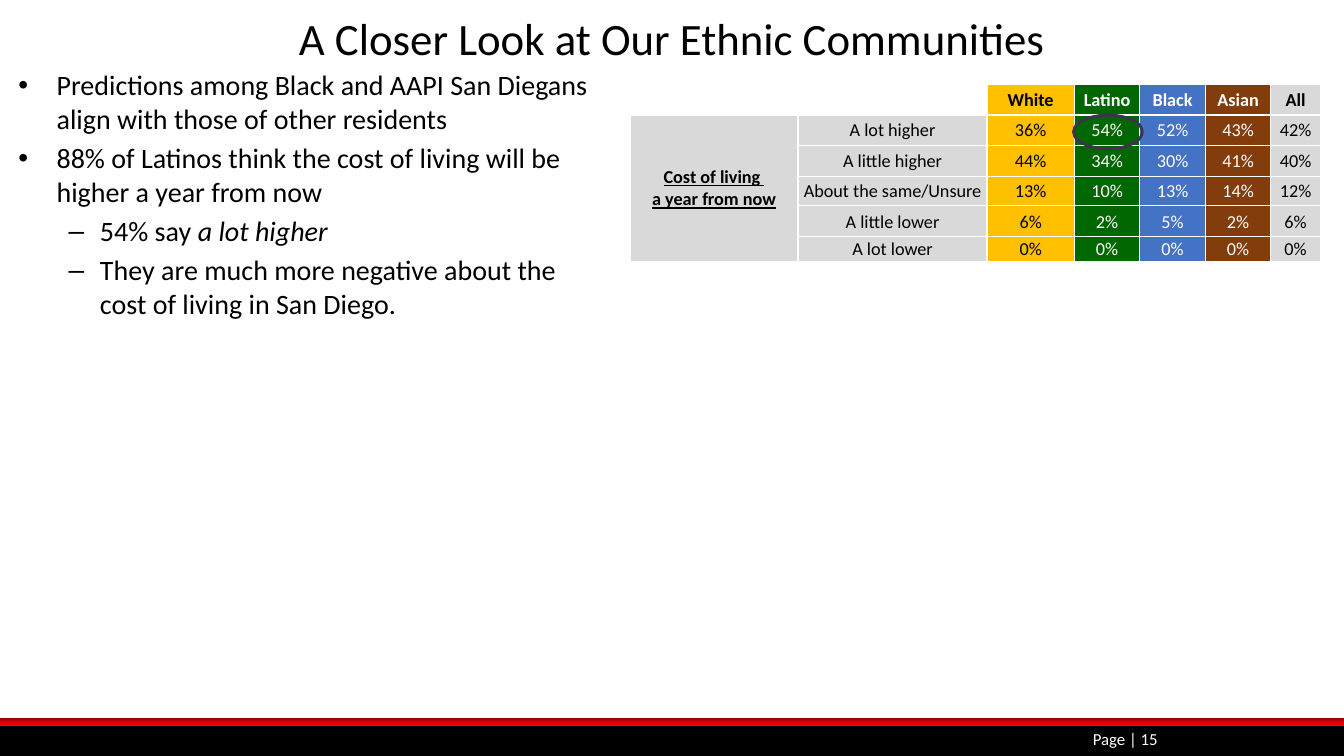
import copy

import lxml.etree
import pptx
import pptx.dml.color
import pptx.enum.shapes
import pptx.enum.text
import pptx.oxml.ns
import pptx.util

SHAPE = pptx.enum.shapes.MSO_SHAPE
ALIGN = pptx.enum.text.PP_ALIGN
ANCHOR = pptx.enum.text.MSO_ANCHOR
BLACK, WHITE, GREY = "000000", "FFFFFF", "D9D9D9"


def color(value):
    return pptx.dml.color.RGBColor.from_string(value)


def add_xml(parent, tag, **attributes):
    return lxml.etree.SubElement(parent, pptx.oxml.ns.qn(tag), attributes)


class SlideBuilder:
    """Draws on one slide; lengths are cells of a grid of 160 columns by 90 rows."""

    font_name = "Calibri"

    def __init__(self, presentation):
        self.slide = presentation.slides.add_slide(presentation.slide_layouts[6])
        self.column = presentation.slide_width / 160
        self.row = presentation.slide_height / 90

    def place(self, left, top, width, height):
        return (round(left * self.column), round(top * self.row),
                round(width * self.column), round(height * self.row))

    def style_runs(self, paragraph, size, ink, bold=False, underline=False):
        for run in paragraph.runs:
            run.font.name = self.font_name
            run.font.size = pptx.util.Pt(size)
            run.font.bold = bold
            run.font.underline = underline
            run.font.color.rgb = color(ink)

    def shape(self, kind, box, fill=None, line=None):
        shape = self.slide.shapes.add_shape(kind, *self.place(*box))
        shape.shadow.inherit = False
        if fill:
            shape.fill.solid()
            shape.fill.fore_color.rgb = color(fill)
        else:
            shape.fill.background()
        if line:
            shape.line.color.rgb = color(line)
            shape.line.width = pptx.util.Pt(2)
        else:
            shape.line.fill.background()
        return shape

    def gradient_band(self, box, top, middle, bottom):
        fill = self.shape(SHAPE.RECTANGLE, box).fill
        fill.gradient()
        fill.gradient_angle = 270
        first = fill._fill._gradFill.gsLst[0]
        first.addnext(copy.deepcopy(first))
        for stop, value, position in zip(fill.gradient_stops, (top, middle, bottom), (0, 0.5, 1)):
            stop.color.rgb = color(value)
            stop.position = position

    def text_frame(self, box, anchor):
        text_frame = self.slide.shapes.add_textbox(*self.place(*box)).text_frame
        text_frame.word_wrap = True
        text_frame.vertical_anchor = anchor
        return text_frame

    def label(self, box, text, size, ink, align):
        text_frame = self.text_frame(box, ANCHOR.MIDDLE)
        text_frame.text = text
        text_frame.paragraphs[0].alignment = align
        self.style_runs(text_frame.paragraphs[0], size, ink)

    def bullets(self, box, items, size):
        """Items are (level, plain text, italic ending)."""
        text_frame = self.text_frame(box, ANCHOR.TOP)
        marks = [("•", 0.38, 0.38), ("–", 0.81, 0.31)]
        for index, (level, plain, italic) in enumerate(items):
            paragraph = text_frame.add_paragraph() if index else text_frame.paragraphs[0]
            paragraph.text = plain
            if italic:
                paragraph.add_run().text = italic
            paragraph.level = level
            paragraph.space_before = pptx.util.Pt(size * 0.2)
            self.style_runs(paragraph, size, BLACK)
            if italic:
                paragraph.runs[-1].font.italic = True
            mark, margin, hanging = marks[level]
            properties = paragraph._p.get_or_add_pPr()
            properties.set("marL", str(pptx.util.Inches(margin)))
            properties.set("indent", str(-pptx.util.Inches(hanging)))
            add_xml(properties, "a:buFont", typeface="Arial")
            add_xml(properties, "a:buChar", char=mark)

    def cell(self, cell, text, fill, ink, size, bold=False, underline=False):
        cell.margin_left = cell.margin_right = cell.margin_top = pptx.util.Inches(0.01)
        cell.margin_bottom = 0
        cell.vertical_anchor = ANCHOR.MIDDLE
        for side in ("a:lnL", "a:lnR", "a:lnT", "a:lnB"):
            border = add_xml(cell._tc.get_or_add_tcPr(), side, w=str(pptx.util.Pt(1)))
            add_xml(add_xml(border, "a:solidFill"), "a:srgbClr", val=WHITE)
        if fill:
            cell.fill.solid()
            cell.fill.fore_color.rgb = color(fill)
        else:
            cell.fill.background()
        cell.text_frame.text = text
        for paragraph in cell.text_frame.paragraphs:
            paragraph.alignment = ALIGN.CENTER
            self.style_runs(paragraph, size, ink, bold, underline)
            add_xml(paragraph._p, "a:endParaRPr", sz=str(size * 100))

    def survey_table(self, left, top, widths, heights, question, groups, answers, size):
        """Groups are (name, fill, ink); answers map a label to one share per group."""
        box = self.place(left, top, sum(widths), sum(heights))
        table = self.slide.shapes.add_table(len(heights), len(widths), *box).table
        table.first_row = table.horz_banding = False
        for column, width in zip(table.columns, widths):
            column.width = round(width * self.column)
        for row, height in zip(table.rows, heights):
            row.height = round(height * self.row)
        table.cell(0, 0).merge(table.cell(0, 1))
        table.cell(1, 0).merge(table.cell(len(answers), 0))
        for index in (0, 1):
            self.cell(table.cell(0, index), "", None, BLACK, size)
        for index, (name, fill, ink) in enumerate(groups, 2):
            self.cell(table.cell(0, index), name, fill, ink, size, bold=True)
        for row, (answer, shares) in enumerate(answers.items(), 1):
            self.cell(table.cell(row, 0), question if row == 1 else "", GREY, BLACK, size,
                      bold=True, underline=True)
            self.cell(table.cell(row, 1), answer, GREY, BLACK, size)
            for index, (share, (_, fill, ink)) in enumerate(zip(shares, groups), 2):
                self.cell(table.cell(row, index), f"{share}%", fill, ink, size)


def main():
    presentation = pptx.Presentation()
    presentation.slide_width = pptx.util.Inches(13.33)
    presentation.slide_height = pptx.util.Inches(7.5)
    builder = SlideBuilder(presentation)

    builder.shape(SHAPE.RECTANGLE, (0, 86.25, 160, 3.75), fill=BLACK)
    builder.gradient_band((-0.2, 85.5, 160.2, 0.9), "970000", "D70000", "FF0000")
    builder.bullets((1, 7.5, 72, 37.5), [
        (0, "Predictions among Black and AAPI San Diegans align with those of other residents", ""),
        (0, "88% of Latinos think the cost of living will be higher a year from now", ""),
        (1, "54% say ", "a lot higher"),
        (1, "They are much more negative about the cost of living in San Diego.", ""),
    ], size=20)
    builder.label((111, 86.4, 28, 3), "Page | 15", 12, WHITE, ALIGN.RIGHT)
    builder.label((1, 0.6, 158, 7.7), "A Closer Look at Our Ethnic Communities",
                  32, BLACK, ALIGN.CENTER)

    groups = [("White", "FFC000", BLACK), ("Latino", "006600", WHITE),
              ("Black", "4472C4", WHITE), ("Asian", "833C0C", WHITE), ("All", GREY, BLACK)]
    answers = {
        "A lot higher": (36, 54, 52, 43, 42),
        "A little higher": (44, 34, 30, 41, 40),
        "About the same/Unsure": (13, 10, 13, 14, 12),
        "A little lower": (6, 2, 5, 2, 6),
        "A lot lower": (0, 0, 0, 0, 0),
    }
    builder.survey_table(75, 10, widths=(20, 22.5, 10.4, 7.8, 7.8, 7.8, 5.9),
                         heights=(3.7, 3.6, 3.7, 3.5, 3.7, 2.9),
                         question="Cost of living \na year from now",
                         groups=groups, answers=answers, size=13)
    builder.shape(SHAPE.OVAL, (127.8, 13.7, 8.2, 4), line="403152")

    presentation.save("out.pptx")


if __name__ == "__main__":
    main()
